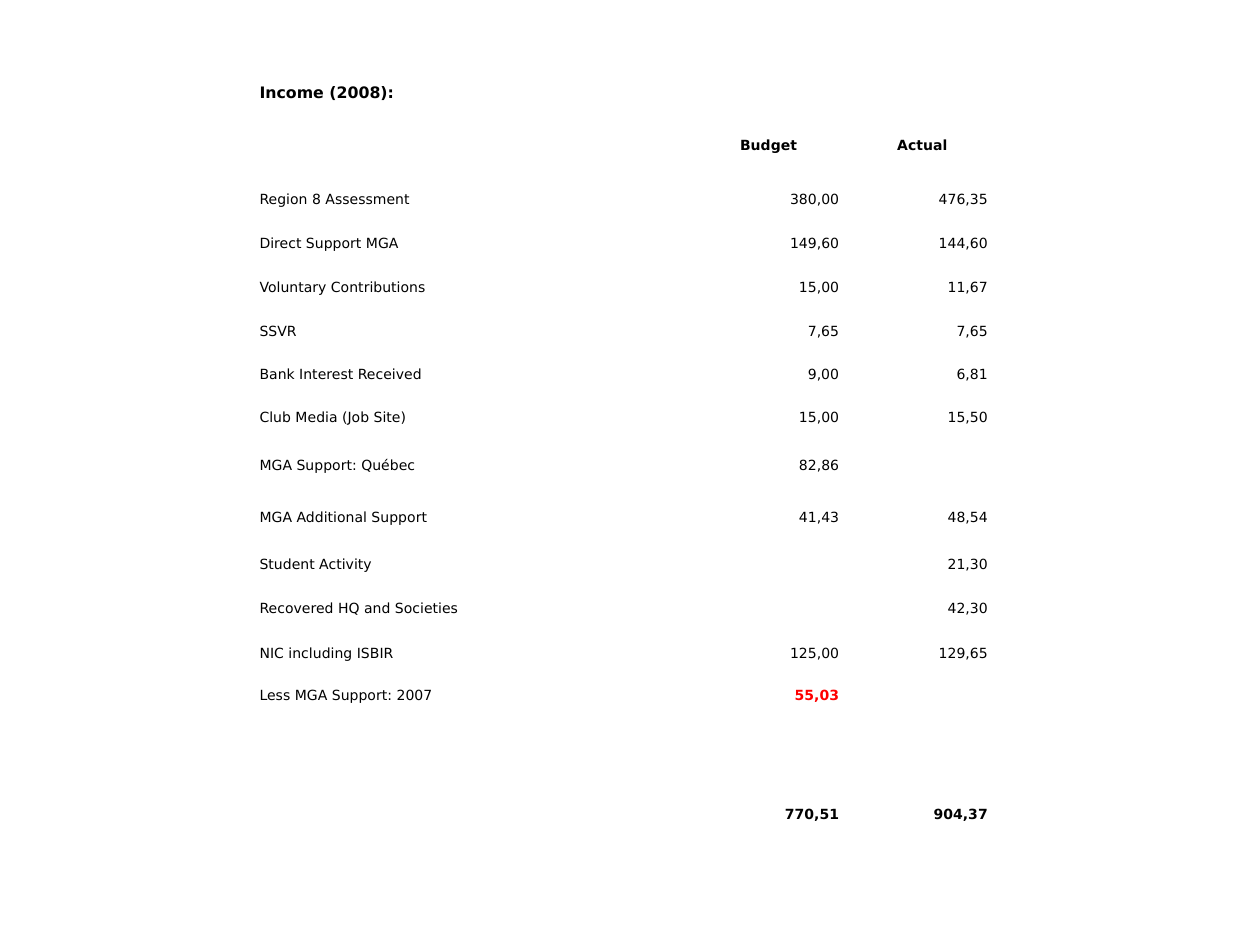
"""Build the 2008 income slide with its budget and actual table."""
from dataclasses import dataclass

from pptx import Presentation
from pptx.dml.color import RGBColor
from pptx.enum.text import MSO_ANCHOR, PP_ALIGN
from pptx.table import Table, _Cell
from pptx.util import Inches, Pt

LEFT, CENTER, RIGHT = PP_ALIGN.LEFT, PP_ALIGN.CENTER, PP_ALIGN.RIGHT
MIDDLE, BOTTOM = MSO_ANCHOR.MIDDLE, MSO_ANCHOR.BOTTOM
BLACK = RGBColor(0x00, 0x00, 0x00)
RED = RGBColor(0xFF, 0x00, 0x00)
FONT = "DejaVu Sans"
SLIDE_WIDTH, SLIDE_HEIGHT = Inches(10), Inches(7.5)
TABLE_LEFT, TABLE_TOP = Inches(1.99), Inches(0.56)
COLUMN_WIDTHS = (3.48, 1.26, 1.18)
ROW_HEIGHT = 0.35
SIDE_MARGIN = Inches(0.07)


@dataclass(frozen=True)
class Style:
    """Look of the text in a cell."""
    align: PP_ALIGN = RIGHT
    size: int = 8
    bold: bool = False
    color: RGBColor = BLACK
    anchor: MSO_ANCHOR = MIDDLE
    space_after: int = 0


@dataclass(frozen=True)
class Line:
    """One table row: label, budget, actual and the look of its cells."""
    label: str = ""
    budget: str = ""
    actual: str = ""
    height: float = ROW_HEIGHT
    figures: Style = Style()
    heading: Style = Style(LEFT)


TITLE = Style(LEFT, size=9, bold=True)
HEADER = Style(CENTER, bold=True, space_after=14)
DEDUCTION = Style(bold=True, color=RED)
TOTAL = Style(bold=True, anchor=BOTTOM)

LINES = (
    Line("Income (2008):", heading=TITLE),
    Line("", "Budget", "Actual", 0.5, HEADER),
    Line("Region 8 Assessment", "380,00", "476,35"),
    Line("Direct Support MGA", "149,60", "144,60"),
    Line("Voluntary Contributions", "15,00", "11,67"),
    Line("SSVR", "7,65", "7,65"),
    Line("Bank Interest Received", "9,00", "6,81", 0.33),
    Line("Club Media (Job Site)", "15,00", "15,50"),
    Line("MGA Support: Québec", "82,86", "", 0.41),
    Line("MGA Additional Support", "41,43", "48,54", 0.41),
    Line("Student Activity", "", "21,30"),
    Line("Recovered HQ and Societies", "", "42,30"),
    Line("NIC including ISBIR", "125,00", "129,65"),
    Line("Less MGA Support: 2007", "55,03", "", 0.33, DEDUCTION),
    Line(),
    Line("", "770,51", "904,37", 0.49, TOTAL),
    Line(height=0.49),
)


def fill_cell(cell: _Cell, text: str, style: Style) -> None:
    """Clear the cell's fill and write its text."""
    cell.fill.background()
    cell.margin_left = cell.margin_right = SIDE_MARGIN
    cell.margin_top = cell.margin_bottom = 0
    cell.vertical_anchor = style.anchor
    if not text:
        return
    para = cell.text_frame.paragraphs[0]
    para.alignment = style.align
    if style.space_after:
        para.space_after = Pt(style.space_after)
    span = para.add_run()
    span.text = text
    span.font.name = FONT
    span.font.size = Pt(style.size)
    span.font.bold = style.bold
    span.font.color.rgb = style.color


def fill_row(table: Table, index: int, line: Line) -> None:
    """Set the row's height and fill its three cells."""
    table.rows[index].height = Inches(line.height)
    fill_cell(table.cell(index, 0), line.label, line.heading)
    fill_cell(table.cell(index, 1), line.budget, line.figures)
    fill_cell(table.cell(index, 2), line.actual, line.figures)


def main() -> None:
    """Create the deck and save it."""
    deck = Presentation()
    deck.slide_width, deck.slide_height = SLIDE_WIDTH, SLIDE_HEIGHT
    page = deck.slides.add_slide(deck.slide_layouts[6])
    frame = page.shapes.add_table(
        len(LINES), len(COLUMN_WIDTHS), TABLE_LEFT, TABLE_TOP,
        Inches(sum(COLUMN_WIDTHS)), Inches(sum(line.height for line in LINES)))
    table = frame.table
    table.first_row = table.horz_banding = False
    for column, width in zip(table.columns, COLUMN_WIDTHS):
        column.width = Inches(width)
    for index, line in enumerate(LINES):
        fill_row(table, index, line)
    table.cell(0, 0).merge(table.cell(0, 2))
    deck.save("out.pptx")


if __name__ == "__main__":
    main()
